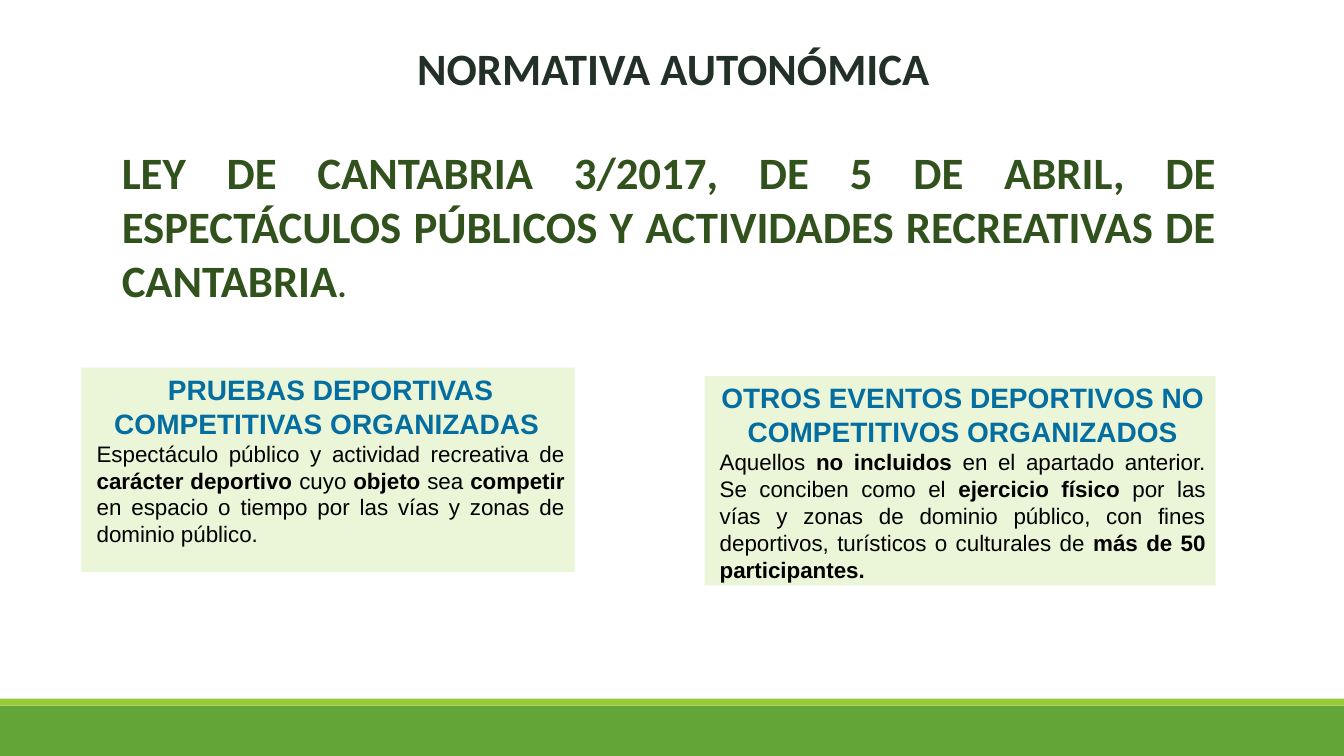
from pptx import Presentation
from pptx.dml.color import RGBColor
from pptx.enum.shapes import MSO_SHAPE
from pptx.enum.text import MSO_ANCHOR, PP_ALIGN
from pptx.util import Pt

RECT = MSO_SHAPE.RECTANGLE
TOP = MSO_ANCHOR.TOP
LEFT, CENTER, JUSTIFY = PP_ALIGN.LEFT, PP_ALIGN.CENTER, PP_ALIGN.JUSTIFY

GREEN = RGBColor(0x63, 0xA5, 0x37)
LIME = RGBColor(0x99, 0xCB, 0x38)
PALE = RGBColor(0xEB, 0xF5, 0xD7)
DARK_GREEN = RGBColor(0x31, 0x52, 0x1C)
SLATE = RGBColor(0x22, 0x30, 0x28)
BLUE = RGBColor(0x05, 0x6E, 0xA0)
BLACK = RGBColor(0, 0, 0)

prs = Presentation()
prs.slide_width, prs.slide_height = Pt(960), Pt(540)
s = prs.slides.add_slide(prs.slide_layouts[6])


def add_rect(x, y, w, h, fill):
    sp = s.shapes.add_shape(RECT, Pt(x), Pt(y), Pt(w), Pt(h))
    sp.shadow.inherit = False
    sp.fill.solid()
    sp.fill.fore_color.rgb = fill
    sp.line.fill.background()
    return sp


def add_run(p, text, size, font, color, bold):
    r = p.add_run()
    r.text = text
    r.font.size = Pt(size)
    r.font.name = font
    r.font.color.rgb = color
    r.font.bold = bold


# Footer bands
add_rect(0, 504, 960, 36, GREEN)
add_rect(0, 499, 960, 5, LIME)

# Name of the law
sp = s.shapes.add_textbox(Pt(79.9), Pt(70.6), Pt(796.3), Pt(244.8))
tf = sp.text_frame
tf.word_wrap = True
tf.margin_top = Pt(33)
p = tf.paragraphs[0]
p.alignment = JUSTIFY
add_run(p, "LEY DE CANTABRIA 3/2017, DE 5 DE ABRIL, DE ESPECTÁCULOS PÚBLICOS "
        "Y ACTIVIDADES RECREATIVAS DE CANTABRIA", 32, "Calibri", DARK_GREEN, True)
add_run(p, ".", 24, "Calibri", DARK_GREEN, True)

# Title
sp = s.shapes.add_textbox(Pt(290.9), Pt(25.2), Pt(394.6), Pt(46))
tf = sp.text_frame
tf.word_wrap = True
p = tf.paragraphs[0]
p.alignment = LEFT
add_run(p, "NORMATIVA AUTONÓMICA", 32, "Calibri", SLATE, True)

# Event cards: frame, heading, body runs as (text, bold)
cards = [
    ((58.2, 262.6, 352.2, 146), "PRUEBAS DEPORTIVAS COMPETITIVAS ORGANIZADAS ", [
        ("Espectáculo público y actividad recreativa de ", False),
        ("carácter deportivo ", True),
        ("cuyo ", False),
        ("objeto", True),
        (" sea ", False),
        ("competir", True),
        (" en espacio o tiempo por las vías y zonas de dominio público.", False),
    ]),
    ((503.3, 268.6, 365, 149.6), "OTROS EVENTOS DEPORTIVOS NO COMPETITIVOS ORGANIZADOS", [
        ("Aquellos ", False),
        ("no incluidos ", True),
        ("en el apartado anterior. Se conciben como el ", False),
        ("ejercicio físico ", True),
        ("por las vías y zonas de dominio público, con fines deportivos, "
         "turísticos o culturales de ", False),
        ("más de 50 participantes.", True),
    ]),
]
for frame, heading, body in cards:
    tf = add_rect(*frame, PALE).text_frame
    tf.word_wrap = True
    tf.vertical_anchor = TOP
    tf.margin_left = Pt(10.8)
    p = tf.paragraphs[0]
    p.alignment = CENTER
    add_run(p, heading, 20, "Arial", BLUE, True)
    p = tf.add_paragraph()
    p.alignment = JUSTIFY
    for text, bold in body:
        add_run(p, text, 16, "Arial", BLACK, bold)

prs.save("out.pptx")
